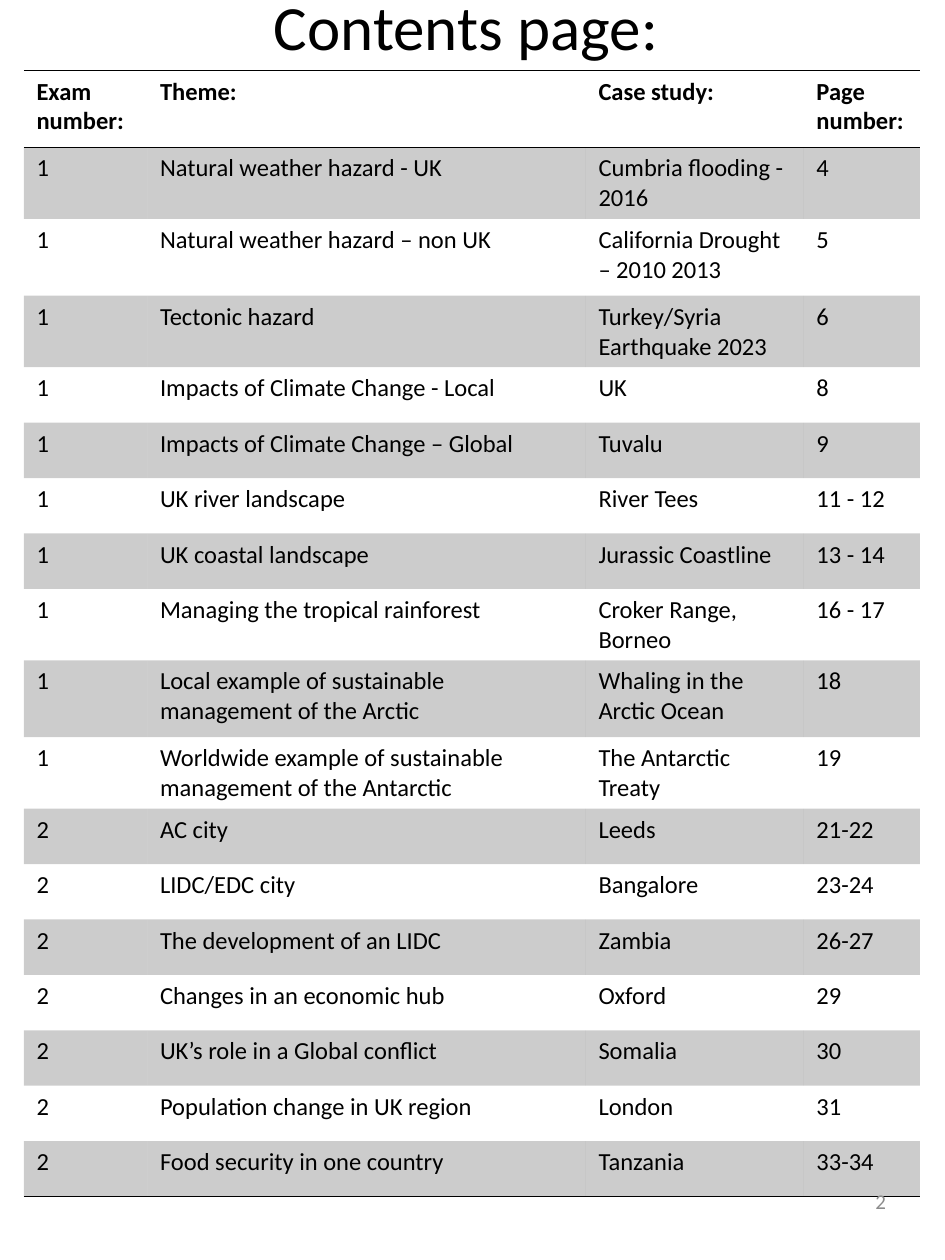
from lxml.etree import SubElement
from pptx import Presentation
from pptx.dml.color import RGBColor
from pptx.enum.text import MSO_ANCHOR as Anchor, PP_ALIGN as Align
from pptx.oxml.ns import qn
from pptx.util import Inches, Pt

BLACK = RGBColor(0x00, 0x00, 0x00)
GREY = RGBColor(0x8C, 0x8C, 0x8C)
FONT = "Calibri"
PLAIN_TABLE = "{2D5ABB26-0587-4C30-8999-92F81FD0307C}"
BAND_ALPHA = "20000"

COLUMN_WIDTHS = (0.98, 3.48, 1.73, 0.92)
ROW_HEIGHT = 0.44
SPECIAL_HEIGHTS = {0: 0.61, 2: 0.61, 9: 0.61, 10: 0.41}

HEADER = ("Exam number:", "Theme:", "Case study:", "Page number:")
CASE_STUDIES = [
    ("1", "Natural weather hazard - UK", "Cumbria flooding - 2016", "4"),
    ("1", "Natural weather hazard – non UK", "California Drought – 2010 2013", "5"),
    ("1", "Tectonic hazard", "Turkey/Syria Earthquake 2023", "6"),
    ("1", "Impacts of Climate Change - Local", "UK", "8"),
    ("1", "Impacts of Climate Change – Global", "Tuvalu", "9"),
    ("1", "UK river landscape", "River Tees", "11 - 12"),
    ("1", "UK coastal landscape", "Jurassic Coastline", "13 - 14"),
    ("1", "Managing the tropical rainforest", "Croker Range, Borneo", "16 - 17"),
    ("1", "Local example of sustainable management of the Arctic",
     "Whaling in the Arctic Ocean", "18"),
    ("1", "Worldwide example of sustainable management of the Antarctic",
     "The Antarctic Treaty", "19"),
    ("2", "AC city", "Leeds", "21-22"),
    ("2", "LIDC/EDC city", "Bangalore", "23-24"),
    ("2", "The development of an LIDC", "Zambia", "26-27"),
    ("2", "Changes in an economic hub", "Oxford", "29"),
    ("2", "UK’s role in a Global conflict", "Somalia", "30"),
    ("2", "Population change in UK region", "London", "31"),
    ("2", "Food security in one country", "Tanzania", "33-34"),
]


class ContentsPage:
    def __init__(self, deck):
        self.page = deck.slides.add_slide(deck.slide_layouts[6])

    def add_span(self, para, text, size, color=BLACK, bold=False):
        span = para.add_run()
        span.text = text
        span.font.name = FONT
        span.font.size = Pt(size)
        span.font.bold = bold
        span.font.color.rgb = color

    def add_text(self, text, left, top, width, height, size, align, color=BLACK):
        box = self.page.shapes.add_textbox(
            Inches(left), Inches(top), Inches(width), Inches(height))
        frame = box.text_frame
        frame.word_wrap = True
        frame.vertical_anchor = Anchor.MIDDLE
        frame.paragraphs[0].alignment = align
        self.add_span(frame.paragraphs[0], text, size, color)

    def add_rule(self, cell, side):
        line = SubElement(cell._tc.get_or_add_tcPr(), qn(f"a:{side}"), w=str(Pt(1)))
        fill = SubElement(line, qn("a:solidFill"))
        SubElement(fill, qn("a:srgbClr"), val=str(BLACK))

    def shade(self, cell):
        cell.fill.solid()
        cell.fill.fore_color.rgb = BLACK
        color = cell._tc.tcPr.find(f"{qn('a:solidFill')}/{qn('a:srgbClr')}")
        SubElement(color, qn("a:alpha"), val=BAND_ALPHA)

    def add_table(self, rows, left, top):
        heights = [SPECIAL_HEIGHTS.get(i, ROW_HEIGHT) for i in range(len(rows))]
        table = self.page.shapes.add_table(
            len(rows), len(COLUMN_WIDTHS), Inches(left), Inches(top),
            Inches(sum(COLUMN_WIDTHS)), Inches(sum(heights))).table
        table._tbl.tblPr.find(qn("a:tableStyleId")).text = PLAIN_TABLE
        for column, width in zip(table.columns, COLUMN_WIDTHS):
            column.width = Inches(width)
        for i, (row, height, values) in enumerate(zip(table.rows, heights, rows)):
            row.height = Inches(height)
            for cell, value in zip(row.cells, values):
                self.add_span(cell.text_frame.paragraphs[0], value, 14, bold=i == 0)
                if i == 0:
                    self.add_rule(cell, "lnT")
                if i in (0, len(rows) - 1):
                    self.add_rule(cell, "lnB")
                if i % 2:
                    self.shade(cell)
                else:
                    cell.fill.background()


def main():
    deck = Presentation()
    deck.slide_width = Inches(7.5)
    deck.slide_height = Inches(10)
    contents = ContentsPage(deck)
    contents.add_text("Contents page: ", 0.38, -0.63, 6.75, 1.67, 36, Align.CENTER)
    contents.add_table([HEADER, *CASE_STUDIES], 0.19, 0.56)
    contents.add_text("2", 5.38, 9.27, 1.75, 0.53, 12, Align.RIGHT, GREY)
    deck.save("out.pptx")


if __name__ == "__main__":
    main()
